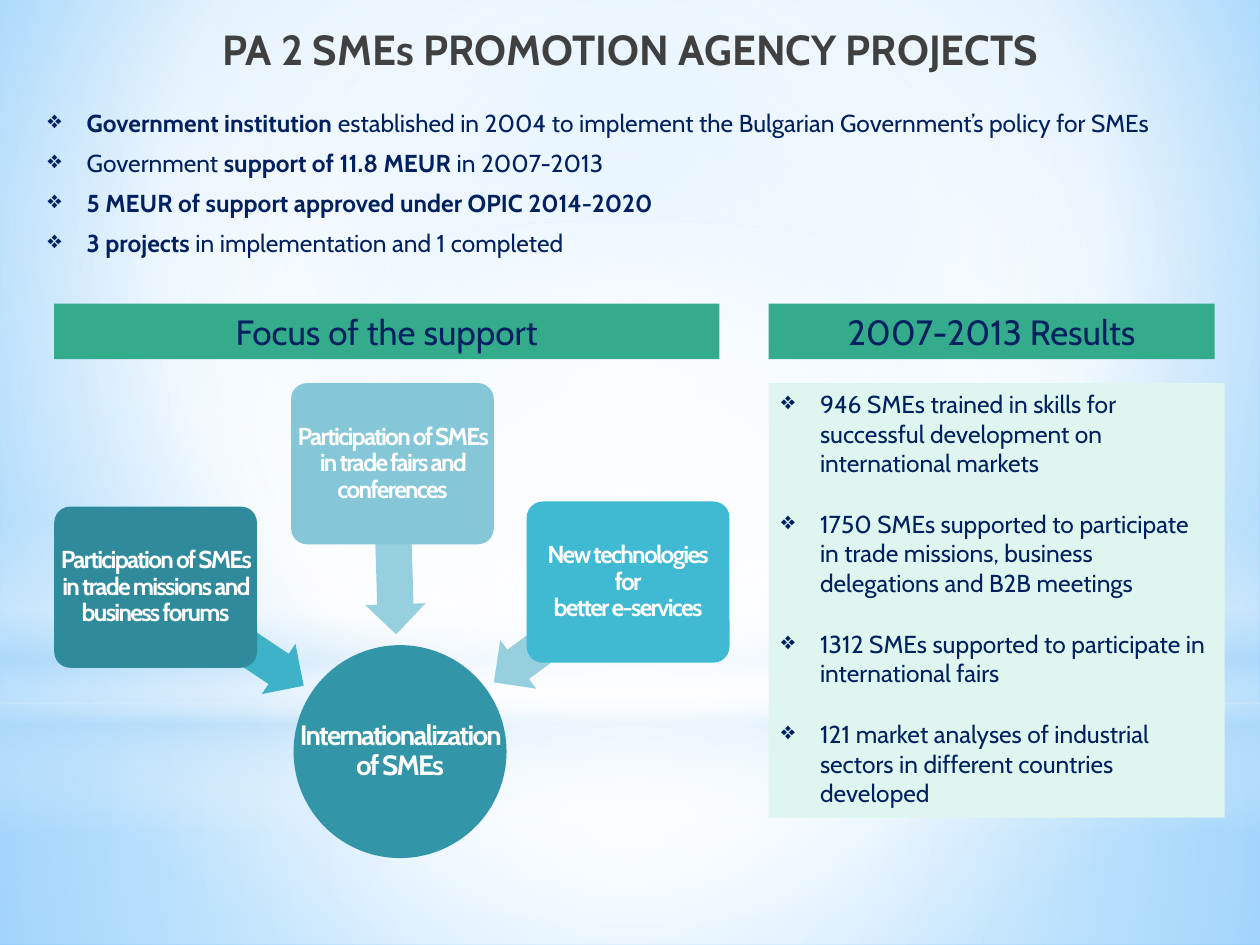
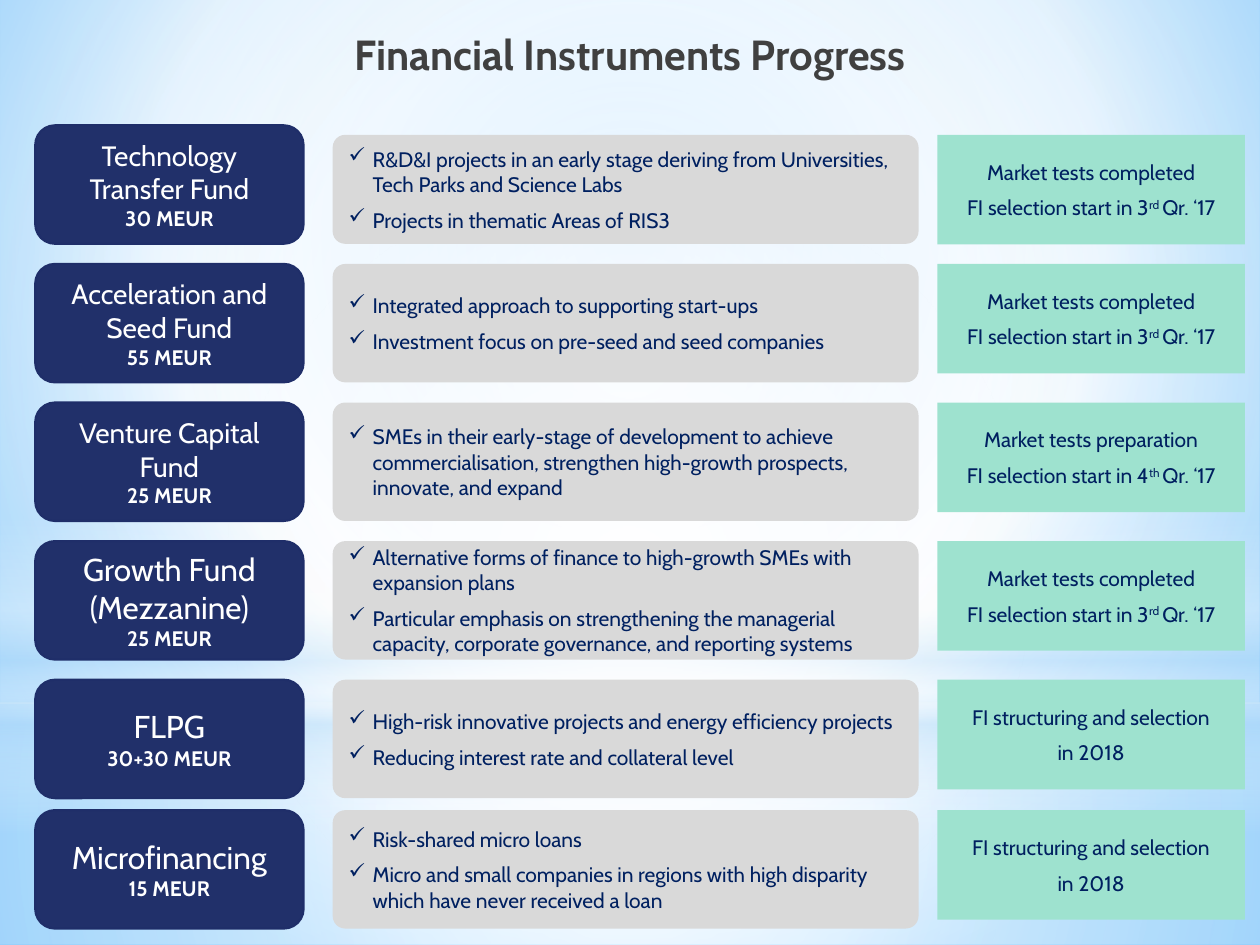
import lxml.etree
import pptx
import pptx.dml.color
import pptx.enum.shapes
import pptx.enum.text
import pptx.oxml.ns
import pptx.util

RGBColor = pptx.dml.color.RGBColor
Kind = pptx.enum.shapes.MSO_SHAPE
Align = pptx.enum.text.PP_ALIGN
Anchor = pptx.enum.text.MSO_ANCHOR
qn = pptx.oxml.ns.qn

FONT = "Cabin"
WHITE = RGBColor(0xFF, 0xFF, 0xFF)
TITLE_GREY = RGBColor(0x40, 0x40, 0x40)
TEXT_NAVY = RGBColor(0x00, 0x20, 0x60)
FUND_NAVY = RGBColor(0x21, 0x30, 0x6A)
FUND_EDGE = RGBColor(0x1F, 0x2E, 0x69)
HEADER_GREEN = RGBColor(0x34, 0xAC, 0x8B)
RESULT_MINT = RGBColor(0xDF, 0xF5, 0xEF)
STATUS_MINT = RGBColor(0x9E, 0xE2, 0xCF)
FOCUS_GREY = RGBColor(0xD9, 0xD9, 0xD9)
HUB_TEAL = RGBColor(0x33, 0x95, 0xA8)
MISSION_TEAL = RGBColor(0x2F, 0x8A, 0x9B)
FAIR_BLUE = RGBColor(0x85, 0xC6, 0xD7)
SERVICE_BLUE = RGBColor(0x40, 0xBA, 0xD2)
ARROW_TEAL = RGBColor(0x3D, 0xB2, 0xC9)
ARROW_PALE = RGBColor(0x96, 0xCF, 0xDE)
SKY = RGBColor(0xB4, 0xDC, 0xFA)
SKY_EDGE = RGBColor(0x9E, 0xD5, 0xFF)
SKY_CORE = RGBColor(0x5B, 0xB9, 0xFF)

deck = pptx.Presentation()
deck.slide_width = pptx.util.Inches(10)
deck.slide_height = pptx.util.Inches(7.5)
COLUMN = deck.slide_width / 100
ROW = deck.slide_height / 75


def add_box(page, kind, place, fill=None, paragraphs=(), size=12, color=TEXT_NAVY,
            align=Align.CENTER, anchor=Anchor.MIDDLE, gap=(0, 0), bullet=None,
            indent=0, spacing=None, inset=None):
    left, top, width, height = place
    area = [int(left * COLUMN), int(top * ROW), int(width * COLUMN), int(height * ROW)]
    if kind is None:
        box = page.shapes.add_textbox(*area)
    else:
        box = page.shapes.add_shape(kind, *area)
        box.shadow.inherit = False
        box.fill.solid()
        box.fill.fore_color.rgb = fill
        box.line.fill.background()
    frame = box.text_frame
    frame.word_wrap = True
    frame.vertical_anchor = anchor
    if inset is not None:
        frame.margin_left = frame.margin_right = int(inset * COLUMN)
        frame.margin_top = frame.margin_bottom = int(inset * ROW)
    for number, pieces in enumerate(paragraphs):
        para = frame.add_paragraph() if number else frame.paragraphs[0]
        para.alignment = align
        para.space_before, para.space_after = map(pptx.util.Pt, gap)
        if spacing:
            para.line_spacing = spacing
        if bullet:
            properties = para._p.get_or_add_pPr()
            properties.set("marL", str(int(indent * COLUMN)))
            properties.set("indent", str(-int(indent * COLUMN)))
            lxml.etree.SubElement(properties, qn("a:buChar")).set("char", bullet)
        for piece in [pieces] if isinstance(pieces, str) else pieces:
            span = para.add_run()
            span.text = piece
            span.font.name = FONT
            span.font.size = pptx.util.Pt(size)
            span.font.color.rgb = color
    return box


def paint_gradient(properties, stops, focus=None):
    gradient = lxml.etree.Element(qn("a:gradFill"), rotWithShape="1")
    stop_list = lxml.etree.SubElement(gradient, qn("a:gsLst"))
    for position, color, opacity in stops:
        stop = lxml.etree.SubElement(stop_list, qn("a:gs"), pos=str(position * 1000))
        tone = lxml.etree.SubElement(stop, qn("a:srgbClr"), val=str(color))
        if opacity < 100:
            lxml.etree.SubElement(tone, qn("a:alpha"), val=str(opacity * 1000))
    if focus:
        circle = lxml.etree.SubElement(gradient, qn("a:path"), {"path": "circle"})
        sides = {side: str(share * 1000) for side, share in zip("ltrb", focus)}
        lxml.etree.SubElement(circle, qn("a:fillToRect"), sides)
    else:
        lxml.etree.SubElement(gradient, qn("a:lin"), ang="5400000", scaled="0")
    properties.replace(properties.find(qn("a:solidFill")), gradient)


blank = deck.slide_layouts[6]
agency_page = deck.slides.add_slide(blank)
fund_page = deck.slides.add_slide(blank)

master = deck.slide_master
master.background.fill.solid()
paint_gradient(master.element.find(".//" + qn("p:bgPr")),
               [(0, SKY_EDGE, 100), (60, WHITE, 100), (100, SKY_CORE, 100)], (20, 10, 20, 60))
CENTRE = (50, 50, 50, 50)
glows = [
    (Kind.RECTANGLE, (0, 55.8, 100, 19.2), [(0, WHITE, 91), (37, WHITE, 76), (100, SKY, 79)], CENTRE),
    (Kind.RECTANGLE, (0, 0, 100, 55.8), [(0, WHITE, 89), (48, WHITE, 62), (100, SKY, 79)], CENTRE),
    (Kind.RECTANGLE, (0, 41.2, 100, 25),
     [(0, WHITE, 0), (29, WHITE, 30), (45, SKY, 40), (55, WHITE, 26), (65, SKY, 60), (100, WHITE, 0)], None),
    (Kind.OVAL, (0, 17.5, 100, 55.8), [(0, WHITE, 100), (56, WHITE, 0)], CENTRE),
]
for number, (kind, place, stops, focus) in enumerate(glows):
    glow = add_box(agency_page, kind, place, WHITE)
    paint_gradient(glow.element.spPr, stops, focus)
    glow.element.nvSpPr.cNvPr.set("id", str(100 + number))
    master.element.cSld.spTree.append(glow.element)

titles = [
    (agency_page, (0, -0.3, 100, 6.3), "PA 2 SMEs PROMOTION AGENCY PROJECTS", 1.5),
    (fund_page, (0, 2.3, 100, 4), "Financial Instruments Progress", 1),
]
for page, place, words, spacing in titles:
    title = add_box(page, None, place, paragraphs=[words], size=24, color=TITLE_GREY,
                    gap=(0, 3 if page is agency_page else 0), spacing=spacing, inset=0)
    title.text_frame.paragraphs[0].runs[0].font.bold = True

facts = [
    ["Government institution ",
     "established in 2004 to implement the Bulgarian Government’s policy for SMEs"],
    ["Government ", "support of 11.8 MEUR ", "in 2007-2013"],
    ["5 MEUR of support approved under OPIC 2014-2020"],
    ["3 projects ", "in implementation and 1 completed"],
]
fact_list = add_box(agency_page, None, (2.8, 8.1, 95.3, 13), paragraphs=facts, size=14,
                    align=Align.JUSTIFY, anchor=Anchor.TOP, gap=(3, 3), bullet="❖", indent=3.1)
for para, bold_run in zip(fact_list.text_frame.paragraphs, (0, 1, 0, 0)):
    para.runs[bold_run].font.bold = True

arrows = [
    ((11.2, 48.1, 14.1, 4.8), 213.8, ARROW_TEAL),
    ((24.5, 41.2, 13.5, 4.8), 268.3, ARROW_PALE),
    ((37.9, 47.8, 13.3, 4.8), 323.5, ARROW_PALE),
]
for place, angle, color in arrows:
    arrow = add_box(agency_page, Kind.LEFT_ARROW, place, color)
    arrow.rotation = angle
    arrow.adjustments[0] = 0.6
    arrow.adjustments[1] = 0.5

cards = [
    (Kind.OVAL, (23.3, 51.2, 16.9, 16.9), HUB_TEAL, 16, 0.1, ["Internationalization of SMEs"]),
    (Kind.ROUNDED_RECTANGLE, (4.3, 40.2, 16.1, 12.8), MISSION_TEAL, 14, 0.3,
     ["Participation of SMEs in trade missions and business forums"]),
    (Kind.ROUNDED_RECTANGLE, (23.1, 30.4, 16.1, 12.8), FAIR_BLUE, 14, 0.3,
     ["Participation of SMEs in trade fairs and conferences"]),
    (Kind.ROUNDED_RECTANGLE, (41.8, 39.8, 16.1, 12.8), SERVICE_BLUE, 14, 0.3,
     ["New technologies", "for", "better e-services"]),
]
for kind, place, color, size, inset, words in cards:
    card = add_box(agency_page, kind, place, color)
    if kind == Kind.ROUNDED_RECTANGLE:
        card.adjustments[0] = 0.1
    label = add_box(agency_page, None, place, paragraphs=words, size=size, color=WHITE,
                    spacing=0.9, inset=inset)
    for para in label.text_frame.paragraphs:
        para.runs[0].font.bold = True
        para.runs[0].font._element.set("spc", "-100")

for left, width, words in [(4.3, 52.8, "Focus of the support"), (61, 35.4, "2007-2013 Results")]:
    add_box(agency_page, Kind.RECTANGLE, (left, 24.1, width, 4.4), HEADER_GREEN, [words], 20)

results = [
    "946 SMEs trained in skills for successful development on international markets",
    "1750 SMEs supported to participate in trade missions, business delegations and B2B meetings",
    "1312 SMEs supported to participate in international fairs",
    "121 market analyses of industrial sectors in different countries developed",
]
add_box(agency_page, Kind.RECTANGLE, (61, 30.4, 36.2, 34.5), RESULT_MINT, results, 14,
        align=Align.LEFT, anchor=Anchor.TOP, gap=(12, 6), bullet="❖", indent=3.1)

third_quarter = ["FI selection start in 3", "rd ", "Qr. ‘17"]
fourth_quarter = ["FI selection start in 4", "th ", "Qr. ‘17"]
tests_done = ["Market tests completed", third_quarter]
structuring = ["FI structuring and selection", "in 2018"]
funds = [
    ("Technology Transfer Fund", 16, "30 MEUR",
     ["R&D&I projects in an early stage deriving from Universities, Tech Parks and Science Labs",
      "Projects in thematic Areas of RIS3"], tests_done),
    ("Acceleration and Seed Fund", 16, "55 MEUR",
     ["Integrated approach to supporting start-ups",
      "Investment focus on pre-seed and seed companies"], tests_done),
    ("Venture Capital Fund", 16, "25 MEUR",
     ["SMEs in their early-stage of development to achieve commercialisation, "
      "strengthen high-growth prospects, innovate, and expand"],
     ["Market tests preparation", fourth_quarter]),
    ("Growth Fund (Mezzanine)", 18, "25 MEUR",
     ["Alternative forms of finance to high-growth SMEs with expansion plans",
      "Particular emphasis on strengthening the managerial capacity, "
      "corporate governance, and reporting systems"], tests_done),
    ("FLPG", 18, "30+30 MEUR",
     ["High-risk innovative projects and energy efficiency projects",
      "Reducing interest rate and collateral level"], structuring),
    ("Microfinancing", 18, "15 MEUR",
     ["Risk-shared micro loans",
      "Micro and small companies in regions with high disparity "
      "which have never received a loan"], structuring),
]
FUND_HEIGHT = 9.4
for number, (name, name_size, budget, aims, status) in enumerate(funds):
    top = min(9.95 + 11 * number, 64.3)
    inner_top = max(top, 10.7)
    aim_height = top + FUND_HEIGHT - inner_top

    fund = add_box(fund_page, Kind.ROUNDED_RECTANGLE, (2.8, top, 21.3, FUND_HEIGHT),
                   FUND_NAVY, [name, budget], color=WHITE)
    fund.line.color.rgb = FUND_EDGE
    fund.line.width = pptx.util.Pt(1.25)
    name_para, budget_para = fund.text_frame.paragraphs
    name_para.runs[0].font.size = pptx.util.Pt(name_size)
    budget_para.runs[0].font.bold = True

    aim_box = add_box(fund_page, Kind.ROUNDED_RECTANGLE, (26.4, inner_top, 46.5, aim_height),
                      FOCUS_GREY, aims, align=Align.LEFT, gap=(3, 3), bullet="✓", indent=1.9)
    aim_box.adjustments[0] = 1 / aim_height

    status_box = add_box(fund_page, Kind.RECTANGLE, (74.4, inner_top, 24.4, 8.7),
                         STATUS_MINT, status, gap=(3, 3))
    for span in status_box.text_frame.paragraphs[1].runs[1:2]:
        span.font._element.set("baseline", "30000")

deck.save("out.pptx")
